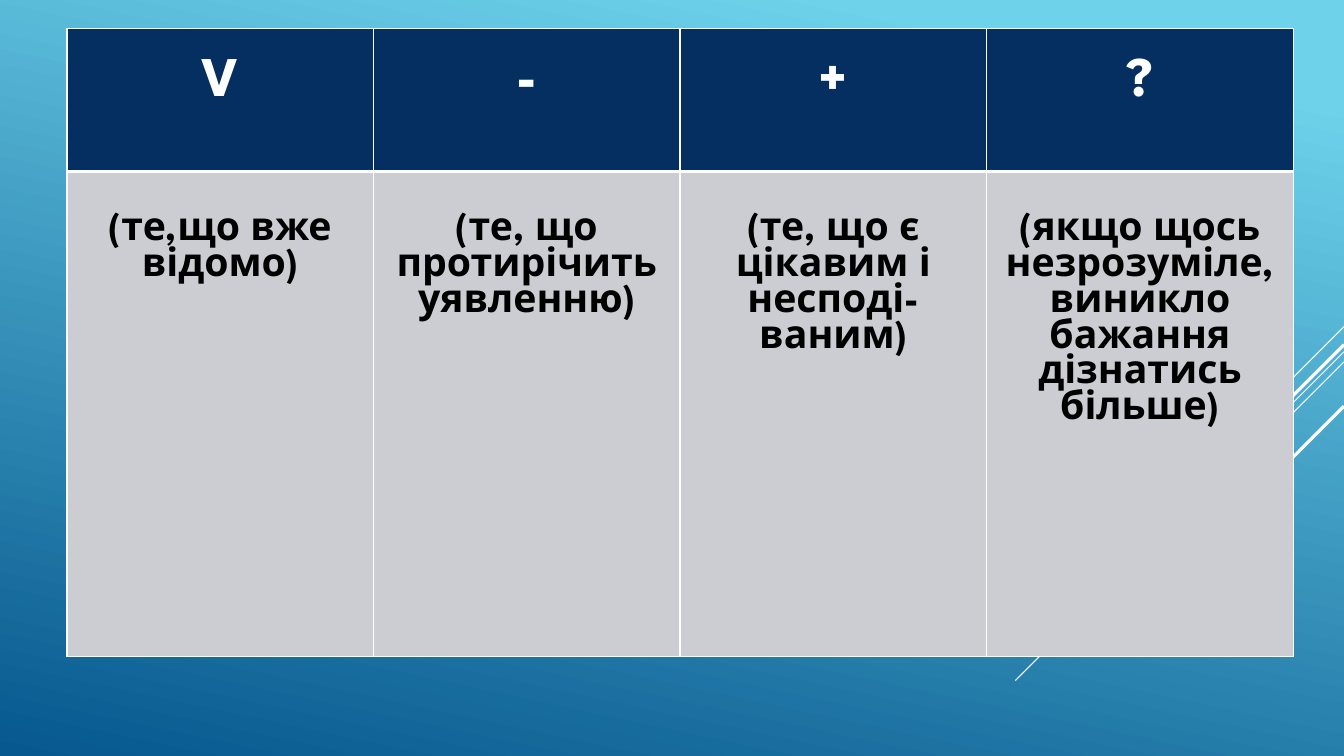
from lxml.etree import SubElement
from pptx import Presentation
from pptx.dml.color import RGBColor as RGB
from pptx.enum.shapes import MSO_CONNECTOR as CONN
from pptx.enum.text import PP_ALIGN as ALIGN
from pptx.oxml.ns import qn
from pptx.util import Pt

COLORS = {
    "sky": "6ED2EB", "deep": "06588E", "white": "FFFFFF",
    "navy": "052F61", "grey": "CCCDD2", "black": "000000",
}
FONT = "League Spartan"
WIDTH, HEIGHT = 960, 540
RAYS = [(233.3, 72, 0.75), (251.3, 234.7, 0.75), (258.5, 149, 0.75),
        (246.2, 137.5, 2.25), (290.2, 100, 2.25)]
COLUMNS = [
    ("V", ["(те,що вже відомо)"]),
    ("-", ["(те, що протирічить уявленню)"]),
    ("+", ["(те, що є цікавим і несподі-", "ваним)"]),
    ("?", ["(якщо щось незрозуміле, виникло бажання дізнатись більше)"]),
]


def color(name):
    return RGB.from_string(COLORS[name])


def add_background(s):
    fill = s.background.fill
    fill.gradient()
    fill.gradient_angle = 258
    for stop, name, pos in zip(fill.gradient_stops, ("sky", "deep"), (0.1, 1)):
        stop.color.rgb = color(name)
        stop.position = pos


def add_rays(s, right):
    for top, run, weight in RAYS:
        ray = s.shapes.add_connector(CONN.STRAIGHT, Pt(right), Pt(top),
                                     Pt(right - run), Pt(top + run))
        ray.line.color.rgb = color("white")
        ray.line.width = Pt(weight)
        SubElement(ray._element.spPr, qn("a:effectLst"))


def set_borders(cell, top, bottom):
    tcPr = cell._tc.get_or_add_tcPr()
    for side, weight in (("L", 1), ("R", 1), ("T", top), ("B", bottom)):
        ln = SubElement(tcPr, qn(f"a:ln{side}"), w=str(Pt(weight)))
        fill = SubElement(ln, qn("a:solidFill"))
        SubElement(fill, qn("a:srgbClr"), val=COLORS["white"])


def fill_cell(cell, lines, size, ink, paper, margin):
    cell.fill.solid()
    cell.fill.fore_color.rgb = color(paper)
    cell.margin_top = Pt(margin)
    tf = cell.text_frame
    for i, line in enumerate(lines):
        p = tf.add_paragraph() if i else tf.paragraphs[0]
        p.alignment = ALIGN.CENTER
        r = p.add_run()
        r.text = line
        r.font.name = FONT
        r.font.size = Pt(size)
        r.font.bold = True
        r.font.color.rgb = color(ink)


def add_marks_table(s, left, top, width, heights):
    table = s.shapes.add_table(2, len(COLUMNS), Pt(left), Pt(top),
                               Pt(width), Pt(sum(heights))).table
    table.horz_banding = False
    for row, height in zip(table.rows, heights):
        row.height = Pt(height)
    for col, (mark, meaning) in enumerate(COLUMNS):
        head, body = table.cell(0, col), table.cell(1, col)
        set_borders(head, 1, 3)
        set_borders(body, 3, 1)
        fill_cell(head, [mark], 40, "white", "navy", 20.2)
        fill_cell(body, meaning, 28, "black", "grey", 29.4)


def main():
    prs = Presentation()
    prs.slide_width, prs.slide_height = Pt(WIDTH), Pt(HEIGHT)
    s = prs.slides.add_slide(prs.slide_layouts[6])
    add_background(s)
    add_rays(s, WIDTH)
    add_marks_table(s, 47.8, 20.6, 876, (102, 346.5))
    prs.save("out.pptx")


if __name__ == "__main__":
    main()
